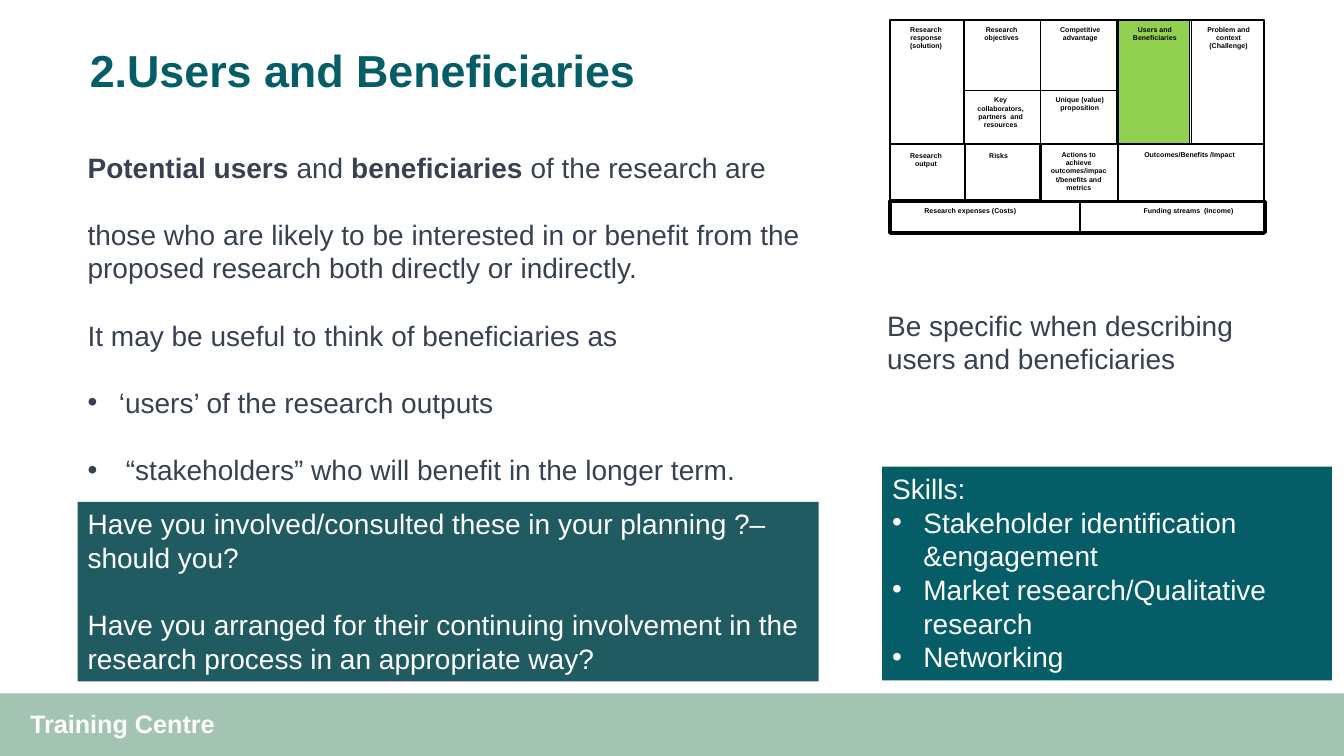
import pptx
import pptx.util
import pptx.dml.color
import pptx.enum.shapes
import pptx.enum.text
import pptx.oxml
import pptx.oxml.ns
import lxml.etree

Inches = pptx.util.Inches
Pt = pptx.util.Pt
RGBColor = pptx.dml.color.RGBColor
ALIGN = pptx.enum.text.PP_ALIGN
ANCHOR = pptx.enum.text.MSO_ANCHOR
qn = pptx.oxml.ns.qn

WHITE = RGBColor(0xFF, 0xFF, 0xFF)
BLACK = RGBColor(0x00, 0x00, 0x00)
SAGE = RGBColor(0x85, 0xAF, 0x9A)
TEAL = RGBColor(0x05, 0x5D, 0x67)
SLATE_TEAL = RGBColor(0x20, 0x5B, 0x62)
GREEN = RGBColor(0x92, 0xD0, 0x50)
SLATE = RGBColor(0x37, 0x41, 0x51)

prs = pptx.Presentation()
prs.slide_width = Inches(13.33)
prs.slide_height = Inches(7.5)
s = prs.slides.add_slide(prs.slide_layouts[5])


def add_rect(box, fill=None, line=None):
    sp = s.shapes.add_shape(pptx.enum.shapes.MSO_SHAPE.RECTANGLE, *map(Inches, box))
    sp.shadow.inherit = False
    if fill is None:
        sp.fill.background()
    else:
        sp.fill.solid()
        sp.fill.fore_color.rgb = fill
    if line is None:
        sp.line.fill.background()
    else:
        sp.line.color.rgb = BLACK
        sp.line.width = Pt(line)
    return sp


def write(sp, paragraphs, size, color, bold=False, align=ALIGN.LEFT, gap=0):
    """Each paragraph is (bullet indent, [(text, bold), ...]) or plain text."""
    tf = sp.text_frame
    tf.word_wrap = True
    tf.vertical_anchor = ANCHOR.TOP
    for i, paragraph in enumerate(paragraphs):
        if isinstance(paragraph, str):
            paragraph = (0, [(paragraph, bold)])
        indent, runs = paragraph
        p = tf.paragraphs[0] if i == 0 else tf.add_paragraph()
        p.alignment = align
        if indent:
            pPr = p._p.get_or_add_pPr()
            pPr.set("marL", str(Inches(indent)))
            pPr.set("indent", str(-Inches(indent)))
            lxml.etree.SubElement(pPr, qn("a:buFont")).set("typeface", "Arial")
            lxml.etree.SubElement(pPr, qn("a:buChar")).set("char", "•")
        if i and gap:
            p.space_before = Pt(gap)
        for text, run_bold in runs:
            r = p.add_run()
            r.text = text
            r.font.name = "Arial"
            r.font.size = Pt(size)
            r.font.bold = run_bold
            r.font.color.rgb = color


# Footer band
band = add_rect((0, 6.88, 13.33, 0.62), SAGE)
band_color = band.fill._xPr.find(qn("a:solidFill"))[0]
lxml.etree.SubElement(band_color, qn("a:alpha")).set("val", "75000")
sp = s.shapes.add_textbox(Inches(0.2), Inches(6.98), Inches(2.65), Inches(0.4))
write(sp, ["Training Centre"], 18, WHITE, bold=True)

# Title
title = s.shapes.title
title.left, title.top, title.width, title.height = map(Inches, (0.79, 0.2, 11.76, 1.04))
write(title, ["2.Users and Beneficiaries"], 32, TEAL, bold=True)
title.text_frame.vertical_anchor = ANCHOR.MIDDLE
title.text_frame.paragraphs[0].line_spacing = 0.9

# Research canvas: cells
add_rect((11.08, 0.2, 0.72, 1.23), GREEN, 1)
for box, width in [
    ((8.83, 0.2, 3.71, 2.12), 1.5),
    ((10.32, 0.9, 0.77, 0.53), 1),
    ((11.09, 0.2, 0.73, 1.23), 1),
    ((10.32, 0.2, 0.77, 1.23), 1),
    ((9.56, 0.2, 0.76, 1.23), 1),
    ((8.82, 1.99, 1.89, 0.32), 1.5),
    ((11.09, 1.43, 1.45, 0.57), 1),
    ((8.83, 2, 3.72, 0.31), 2.25),
    ((8.83, 1.43, 0.74, 0.56), 1.5),
    ((9.57, 1.43, 0.75, 0.56), 1.5),
]:
    add_rect(box, line=width)

divider = s.shapes.add_connector(
    pptx.enum.shapes.MSO_CONNECTOR.STRAIGHT,
    Inches(9.56), Inches(0.9), Inches(10.32), Inches(0.9))
divider.line.color.rgb = BLACK
divider.line.width = Pt(1)
lxml.etree.SubElement(divider._element.spPr, qn("a:effectLst"))

# Research canvas: labels
for label, box in [
    ("Research response (solution)", (8.83, 0.2, 0.71, 0.44)),
    ("Research objectives", (9.56, 0.2, 0.75, 0.35)),
    ("Competitive advantage", (10.31, 0.2, 0.81, 0.44)),
    ("Users and Beneficiaries", (11.11, 0.2, 0.69, 0.35)),
    ("Problem and context (Challenge)", (11.84, 0.2, 0.69, 0.35)),
    ("Key collaborators, partners  and resources", (9.57, 0.9, 0.71, 0.52)),
    ("Unique (value) proposition", (10.32, 0.9, 0.78, 0.27)),
    ("Research output", (8.82, 1.45, 0.73, 0.44)),
    ("Risks", (9.54, 1.45, 0.73, 0.35)),
    ("Actions to achieve outcomes/impact/benefits and metrics", (10.32, 1.44, 0.76, 0.52)),
    ("Outcomes/Benefits /Impact", (11.11, 1.44, 1.38, 0.19)),
    ("Research expenses (Costs)", (8.87, 2, 1.51, 0.27)),
    ("Funding streams  (Income)", (11.09, 2, 1.4, 0.19)),
]:
    sp = s.shapes.add_textbox(*map(Inches, box))
    write(sp, [label], 5, BLACK, bold=True, align=ALIGN.CENTER)

# Main text
sp = s.shapes.add_textbox(Inches(0.77), Inches(1.44), Inches(8.05), Inches(4.82))
write(sp, [
    (0, [("Potential users ", True), ("and ", False),
         ("beneficiaries", True), (" of the research are", False)]),
    "those who are likely to be interested in or benefit from the "
    "proposed research both directly or indirectly.",
    "It may be useful to think of beneficiaries as",
    (0.31, [("‘users’ of the research outputs", False)]),
    (0.38, [("“stakeholders” who will benefit in the longer term.", False)]),
], 20, SLATE, gap=24)

# Advice
sp = s.shapes.add_textbox(Inches(8.7), Inches(3.01), Inches(4.34), Inches(0.77))
write(sp, ["Be specific when describing users and beneficiaries"], 20, SLATE)

# Questions panel
sp = add_rect((0.77, 4.98, 7.35, 1.78), SLATE_TEAL)
write(sp, [
    "Have you involved/consulted these in your planning ?– should you?",
    "Have you arranged for their continuing involvement in the "
    "research process in an appropriate way?",
], 20, WHITE, gap=24)

# Skills panel
skills = ["Stakeholder identification &engagement",
          "Market research/Qualitative research", "Networking"]
sp = add_rect((8.75, 4.63, 4.46, 2.12), TEAL)
write(sp, ["Skills:"] + [(0.31, [(skill, False)]) for skill in skills], 20, WHITE)

prs.save("out.pptx")
